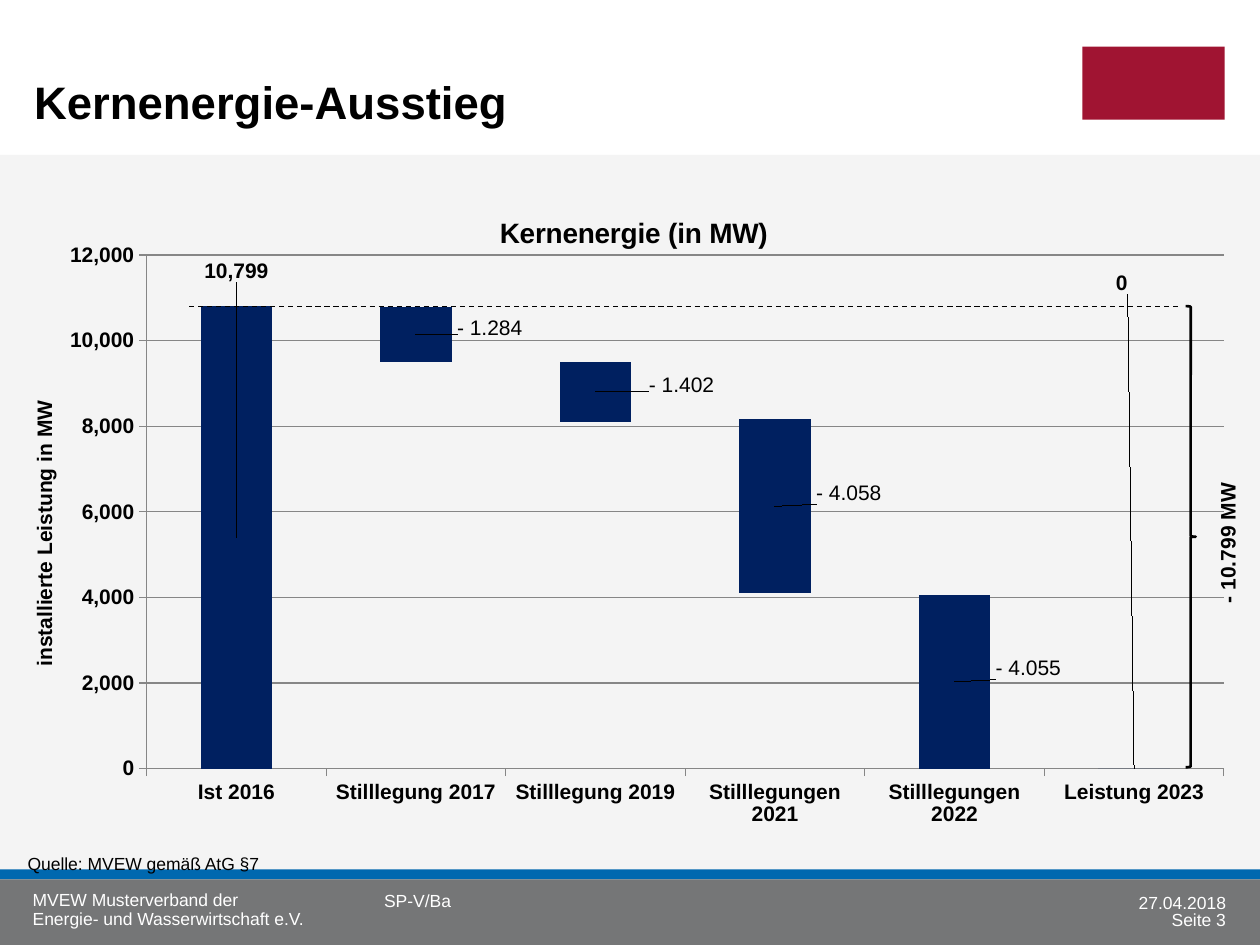
from lxml.etree import SubElement
from pptx import Presentation
from pptx.chart.data import CategoryChartData
from pptx.dml.color import RGBColor
from pptx.enum.chart import XL_CHART_TYPE, XL_TICK_MARK
from pptx.enum.dml import MSO_LINE
from pptx.enum.shapes import MSO_CONNECTOR, MSO_SHAPE
from pptx.enum.text import MSO_ANCHOR, MSO_AUTO_SIZE, PP_ALIGN
from pptx.oxml import parse_xml
from pptx.oxml.ns import nsdecls, qn
from pptx.util import Inches, Pt

COLORS = {
    "black": "000000", "white": "FFFFFF", "panel": "F4F4F4", "blue": "0068AF",
    "footer": "757677", "logo": "A01432", "bar": "002060", "grid": "868686",
}

BLOCKS = [
    ((0, 1.23, 10, 6.27), "panel"),
    ((0, 6.9, 10, 0.08), "blue"),
    ((0, 6.98, 10, 0.52), "footer"),
    ((8.59, 0.37, 1.13, 0.58), "logo"),
]

NO_INSET = (0, 0, 0, 0)
TEXTS = [
    (["Kernenergie-Ausstieg"], (0.27, 0.21, 7.48, 0.86),
     dict(size=26, bold=True, inset=(0, 0, 0, 0.05), anchor=MSO_ANCHOR.BOTTOM)),
    (["MVEW Musterverband der", "Energie- und Wasserwirtschaft e.V."],
     (0.26, 7.07, 2.66, 0.31), dict(color="white", inset=NO_INSET, spacing=0.9)),
    (["SP-V/Ba"], (2.95, 7.07, 4.09, 0.16), dict(color="white")),
    (["27.04.2018"], (8.31, 7.08, 1.42, 0.16),
     dict(color="white", inset=NO_INSET, align=PP_ALIGN.RIGHT)),
    (["Seite 3"], (8.31, 7.22, 1.42, 0.16),
     dict(color="white", inset=NO_INSET, align=PP_ALIGN.RIGHT)),
    (["Quelle: MVEW gemäß AtG §7"], (0.12, 6.58, 2.05, 0.41),
     dict(anchor=MSO_ANCHOR.TOP, spacing=Pt(22), grow=True)),
    (["- 10.799 MW"], (9.11, 4.1, 1.16, 0.41),
     dict(size=12, bold=True, anchor=MSO_ANCHOR.TOP, spacing=Pt(22), grow=True,
          rotation=270)),
]

CHART_BOX = (0.12, 1.46, 9.76, 5.28)
PLOT = (0.107, 0.107, 0.876, 0.772)
# category, hidden base, visible bar, custom label, label offset
STEPS = [
    ("Ist 2016", 0, 10799, None, (0, -0.4)),
    ("Stilllegung 2017", 9500, 1284, "- 1.284", (0.06, -0.01)),
    ("Stilllegung 2019", 8100, 1402, "- 1.402", (0.07, -0.01)),
    ("Stilllegungen 2021", 4100, 4058, "- 4.058", (0.06, -0.02)),
    ("Stilllegungen 2022", 0, 4055, "- 4.055", (0.06, -0.02)),
    ("Leistung 2023", 0, 0, None, (-0.01, -0.73)),
]


def rgb(name):
    return RGBColor.from_string(COLORS[name])


def set_font(font, size, bold=False, color="black"):
    font.name, font.size, font.bold = "Arial", Pt(size), bold
    font.color.rgb = rgb(color)


def add_block(slide, box, color):
    sp = slide.shapes.add_shape(MSO_SHAPE.RECTANGLE, *map(Inches, box))
    sp.shadow.inherit = False
    sp.fill.solid()
    sp.fill.fore_color.rgb = rgb(color)
    sp.line.fill.background()


def add_text(slide, lines, box, size=10, bold=False, color="black",
             inset=(0.1, 0.05, 0.1, 0.05), anchor=MSO_ANCHOR.MIDDLE,
             align=PP_ALIGN.LEFT, spacing=1.0, grow=False, rotation=0):
    sp = slide.shapes.add_textbox(*map(Inches, box))
    sp.rotation = rotation
    tf = sp.text_frame
    tf.word_wrap = not grow
    tf.auto_size = MSO_AUTO_SIZE.SHAPE_TO_FIT_TEXT if grow else MSO_AUTO_SIZE.NONE
    tf.vertical_anchor = anchor
    tf.margin_left, tf.margin_top, tf.margin_right, tf.margin_bottom = map(Inches, inset)
    tf.text = "\n".join(lines)
    for p in tf.paragraphs:
        p.alignment, p.line_spacing = align, spacing
        set_font(p.font, size, bold, color)


def set_layout(parent, index, values, inner=False, edge=False):
    for old in parent.findall(qn("c:layout")):
        parent.remove(old)
    layout = parse_xml(f"<c:layout {nsdecls('c')}><c:manualLayout/></c:layout>")
    items = [("layoutTarget", "inner")] if inner else []
    items += [("xMode", "edge"), ("yMode", "edge")] if edge else []
    items += list(zip("xywh", values))
    for tag, value in items:
        SubElement(layout[0], qn(f"c:{tag}")).set("val", str(value))
    parent.insert(index, layout)


def set_title(title, text, size, place):
    title.text_frame.text = text
    set_font(title.text_frame.paragraphs[0].font, size, True)
    set_layout(title._element, 1, place, edge=True)


def add_chart(slide):
    cats, bases, bars, labels, offsets = zip(*STEPS)
    data = CategoryChartData(number_format="#,##0")
    data.categories = cats
    data.add_series("Series 1", bases)
    data.add_series("Series 2", bars)
    chart = slide.shapes.add_chart(
        XL_CHART_TYPE.COLUMN_STACKED, *map(Inches, CHART_BOX), data).chart
    set_font(chart.font, 18)
    chart.has_legend = False
    chart.has_title = True
    set_title(chart.chart_title, "Kernenergie (in MW)", 16, (0.39, 0.04))
    plot = chart.plots[0]
    plot.gap_width, plot.overlap, plot.vary_by_categories = 150, 100, False
    set_layout(chart._chartSpace.chart.plotArea, 0, PLOT, inner=True, edge=True)

    value_axis = chart.value_axis
    value_axis.minimum_scale, value_axis.maximum_scale = 0, 12000
    value_axis.major_unit = 2000
    value_axis.tick_labels.number_format = "#,##0"
    value_axis.tick_labels.number_format_is_linked = False
    value_axis.major_gridlines.format.line.color.rgb = rgb("grid")
    set_title(value_axis.axis_title, "installierte Leistung in MW", 12, (0.01, 0.32))
    for axis in (chart.category_axis, value_axis):
        axis.major_tick_mark = XL_TICK_MARK.OUTSIDE
        axis.format.line.color.rgb = rgb("grid")
        set_font(axis.tick_labels.font, 12, True)

    base, bar = plot.series
    base.format.fill.background()
    bar.format.fill.solid()
    bar.format.fill.fore_color.rgb = rgb("bar")
    dls = bar.data_labels
    dls.show_value = True
    dls.number_format, dls.number_format_is_linked = "#,##0", False
    set_font(dls.font, 12, True)
    for i, (text, offset) in enumerate(zip(labels, offsets)):
        label = bar.points[i].data_label
        if text:
            p = label.text_frame.paragraphs[0]
            r = p.add_run()
            r.text = text
            set_font(r.font, 12)
        else:
            set_font(label.font, 12, True)
        set_layout(dls._element.findall(qn("c:dLbl"))[i], 1, offset)


def add_total_marker(slide):
    top, bottom = 2.43, 6.09
    brace = slide.shapes.add_shape(
        MSO_SHAPE.RIGHT_BRACE, *map(Inches, (9.41, top, 0.08, bottom - top)))
    brace.shadow.inherit = False
    brace.fill.background()
    line = slide.shapes.add_connector(
        MSO_CONNECTOR.STRAIGHT, *map(Inches, (1.5, top, 9.38, top)))
    SubElement(line._element.spPr, qn("a:effectLst"))
    for sp, width in ((brace, 1.5), (line, 0.75)):
        sp.line.color.rgb = rgb("black")
        sp.line.width = Pt(width)
    line.line.dash_style = MSO_LINE.DASH
    spPr = line._element.spPr
    spPr.append(spPr.find(qn("a:effectLst")))


def main():
    prs = Presentation()
    prs.slide_width, prs.slide_height = Inches(10), Inches(7.5)
    slide = prs.slides.add_slide(prs.slide_layouts[6])
    for box, color in BLOCKS:
        add_block(slide, box, color)
    add_chart(slide)
    for lines, box, style in TEXTS:
        add_text(slide, lines, box, **style)
    add_total_marker(slide)
    prs.save("out.pptx")


if __name__ == "__main__":
    main()
